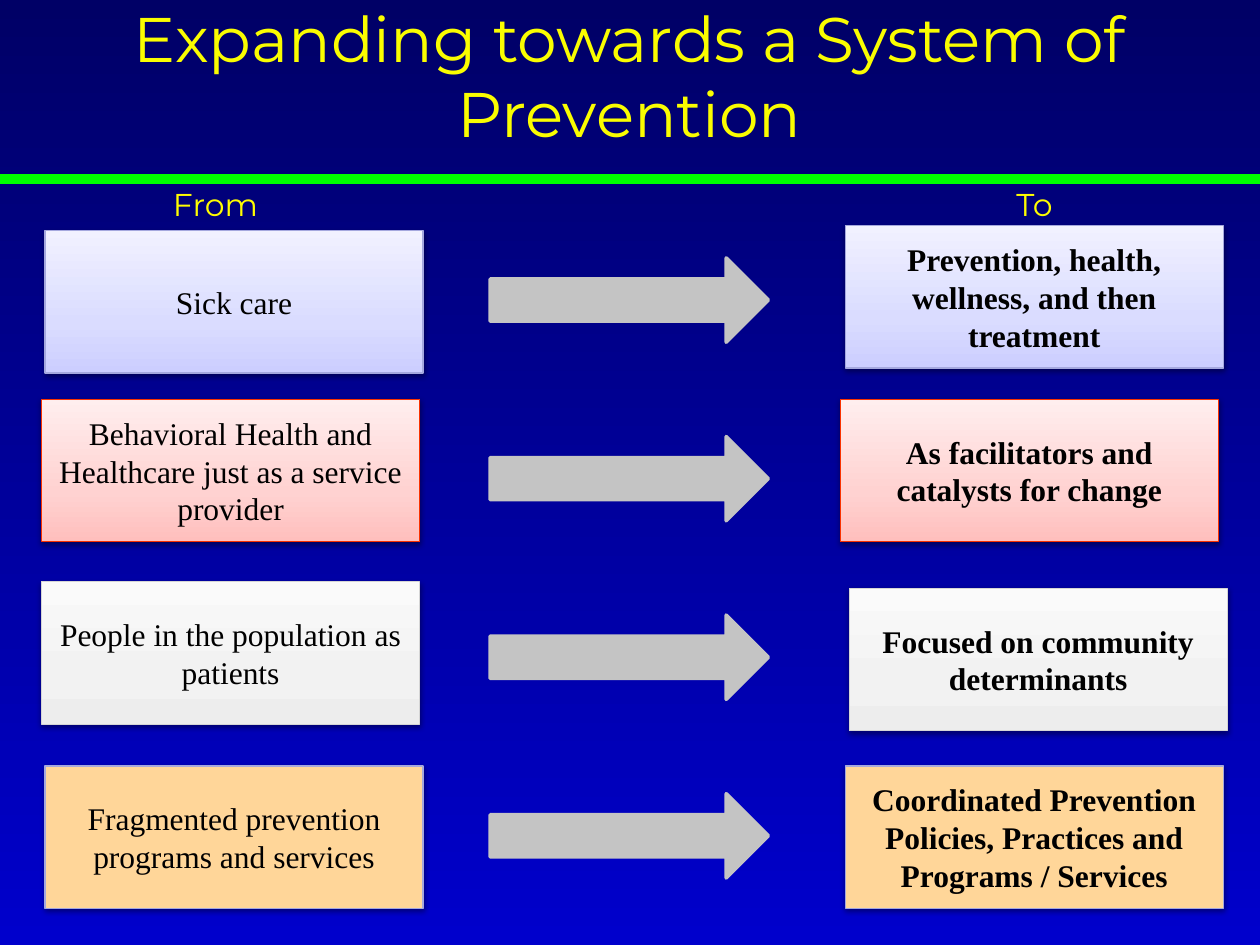
from dataclasses import dataclass

from lxml import etree
from pptx import Presentation, util as u
from pptx.dml.color import RGBColor
from pptx.enum import shapes, text
from pptx.oxml import ns


@dataclass(frozen=True)
class Theme:
    title: str = "FAFD00"
    label: str = "FFFD00"
    ink: str = "000000"
    rule: str = "00FF00"
    arrow: str = "C4C4C4"
    background: tuple = ((0, "000066"), (100, "0000CC"))
    heading_font: str = "Montserrat"
    body_font: str = "Times New Roman"
    title_size: int = 36
    body_size: int = 18


@dataclass(frozen=True)
class Style:
    stops: tuple
    line: str


@dataclass(frozen=True)
class Box:
    words: str
    left: float
    top: float


@dataclass(frozen=True)
class Shift:
    before: Box
    after: Box
    style: Style


T = Theme()
BOX_W, BOX_H = 7.62, 2.87
ARROW_LEFT, ARROW_TOP, ARROW_PITCH = 9.88, 5.2, 3.6
ARROW_W, ARROW_H = 5.61, 1.7
RULE_Y = 3.61

BLUE = Style(((0, "CCCEFF"), (35, "DADCFF"), (100, "F1F1FF")), "A5A8DE")
RED = Style(((0, "FFBFBD"), (35, "FFD2D1"), (100, "FFEEEE")), "F93200")
GREY = Style(((0, "EDEDED"), (35, "F2F2F2"), (100, "FAFAFA")), "D5D5D5")
ORANGE = Style(((0, "FFD699"),), "A5A8DE")

SHIFTS = [
    Shift(Box("Sick care", 0.91, 4.65),
          Box("Prevention, health, wellness, and then treatment", 17.04, 4.55), BLUE),
    Shift(Box("Behavioral Health and Healthcare just as a service provider", 0.84, 8.05),
          Box("As facilitators and catalysts for change", 16.94, 8.05), RED),
    Shift(Box("People in the population as patients", 0.84, 11.73),
          Box("Focused on community determinants", 17.12, 11.86), GREY),
    Shift(Box("Fragmented prevention programs and services", 0.91, 15.44),
          Box("Coordinated Prevention Policies, Practices and Programs / Services",
              17.04, 15.44), ORANGE),
]


def rgb(value: str) -> RGBColor:
    return RGBColor.from_string(value)


def add(parent, tag: str, **attrs):
    return etree.SubElement(parent, ns.qn(tag), {k: str(v) for k, v in attrs.items()})


def paint(fill, element, stops: tuple, angle: int) -> None:
    if len(stops) == 1:
        fill.solid()
        fill.fore_color.rgb = rgb(stops[0][1])
        return
    fill.gradient()
    fill.gradient_angle = angle
    gs_list = element.find(".//" + ns.qn("a:gsLst"))
    for gs in list(gs_list):
        gs_list.remove(gs)
    for position, color in stops:
        add(add(gs_list, "a:gs", pos=position * 1000), "a:srgbClr", val=color)


def write(sp, words: str, *, font: str = T.body_font, size: int = T.body_size,
          color: str = T.ink, bold: bool = False,
          anchor=text.MSO_ANCHOR.MIDDLE) -> None:
    tf = sp.text_frame
    tf.word_wrap = True
    tf.vertical_anchor = anchor
    p = tf.paragraphs[0]
    p.alignment = text.PP_ALIGN.CENTER
    r = p.add_run()
    r.text = words
    r.font.name, r.font.size, r.font.bold = font, u.Pt(size), bold
    r.font.color.rgb = rgb(color)


def add_shape(s, kind, left: float, top: float, width: float, height: float,
              style: Style, weight: float):
    sp = s.shapes.add_shape(kind, u.Cm(left), u.Cm(top), u.Cm(width), u.Cm(height))
    sp.shadow.inherit = False
    paint(sp.fill, sp.element, style.stops, 90)
    sp.line.color.rgb = rgb(style.line)
    sp.line.width = u.Pt(weight)
    return sp


def add_box(s, box: Box, style: Style, bold: bool) -> None:
    sp = add_shape(s, shapes.MSO_SHAPE.RECTANGLE, box.left, box.top,
                   BOX_W, BOX_H, style, 0.75)
    effects = sp.element.spPr.find(ns.qn("a:effectLst"))
    shadow = add(effects, "a:outerShdw", blurRad=u.Pt(3.1), dist=u.Pt(1.6),
                 dir=5400000, rotWithShape=0)
    add(add(shadow, "a:srgbClr", val="000000"), "a:alpha", val=38000)
    write(sp, box.words, bold=bold)


def add_text(s, words: str, left: float, top: float, width: float, height: float,
             **fmt) -> None:
    sp = s.shapes.add_textbox(u.Cm(left), u.Cm(top), u.Cm(width), u.Cm(height))
    write(sp, words, font=T.heading_font, **fmt)


def add_rule(s, width: int) -> None:
    cx = s.shapes.add_connector(shapes.MSO_CONNECTOR.STRAIGHT,
                                0, u.Cm(RULE_Y), width, u.Cm(RULE_Y))
    cx.line.color.rgb = rgb(T.rule)
    cx.line.width = u.Pt(6)
    add(cx._element.spPr, "a:effectLst")


def main() -> None:
    """Build the slide that contrasts sick care with a system of prevention."""
    prs = Presentation()
    prs.slide_width, prs.slide_height = u.Cm(25.4), u.Cm(19.05)
    s = prs.slides.add_slide(prs.slide_layouts[6])
    paint(s.background.fill, s._element, T.background, 270)

    add_text(s, "Expanding towards a System of Prevention", 1.35, 0.81, 22.68, 1.4,
             size=T.title_size, color=T.title)
    add_rule(s, prs.slide_width)
    for words, left in (("From", 2.54), ("To", 19.05)):
        add_text(s, words, left, RULE_Y, 3.61, 1.02, color=T.label,
                 anchor=text.MSO_ANCHOR.TOP)

    arrow_style = Style(((0, T.arrow),), T.arrow)
    for i, shift in enumerate(SHIFTS):
        add_box(s, shift.before, shift.style, bold=False)
        add_shape(s, shapes.MSO_SHAPE.RIGHT_ARROW, ARROW_LEFT,
                  ARROW_TOP + i * ARROW_PITCH, ARROW_W, ARROW_H, arrow_style, 2)
        add_box(s, shift.after, shift.style, bold=True)

    prs.save("out.pptx")


if __name__ == "__main__":
    main()
